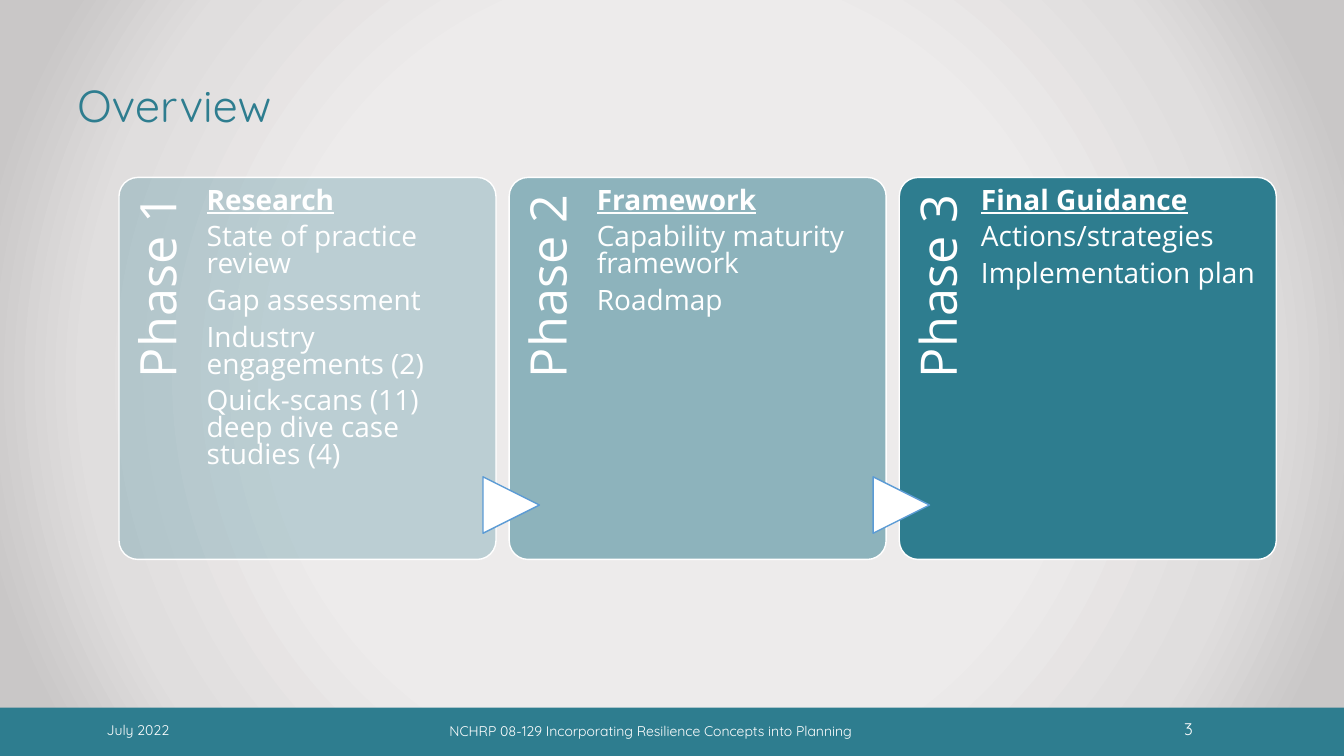
from lxml import etree
from pptx import Presentation
from pptx.dml.color import RGBColor
from pptx.enum import shapes, text
from pptx.oxml import parse_xml
from pptx.oxml.ns import nsdecls, qn
from pptx.util import Pt

TEAL, WHITE, ARROW_EDGE = "2E7D8F", "FFFFFF", "5B9BD5"
PHASES = [
    (26, 8.6, ["Research", "State of practice review", "Gap assessment",
               "Industry engagements (2)", "Quick-scans (11) deep dive case studies (4)"]),
    (50, 8.6, ["Framework", "Capability maturity framework", "Roadmap"]),
    (100, 4.3, ["Final Guidance", "Actions/strategies", "Implementation plan"]),
]
CARD_LEFT, CARD_TOP, CARD_STEP, CARD_WIDTH, CARD_HEIGHT = 85, 126.7, 278.7, 269.3, 272.9


def add_filled(kind, box, fill, line=None, opacity=100):
    """Add a flat preset shape; box is left, top, width, height in points."""
    shape = slide.shapes.add_shape(kind, *map(Pt, box))
    shape.shadow.inherit = False
    shape.fill.solid()
    shape.fill.fore_color.rgb = RGBColor.from_string(fill)
    if opacity < 100:
        color = shape.fill._xPr.find(qn("a:solidFill"))[0]
        etree.SubElement(color, qn("a:alpha")).set("val", str(opacity * 1000))
    if line:
        shape.line.color.rgb = RGBColor.from_string(line)
        shape.line.width = Pt(1)
    else:
        shape.line.fill.background()
    return shape


def style(paragraph, name, size, color):
    paragraph.font.name = name
    paragraph.font.size = Pt(size)
    paragraph.font.color.rgb = RGBColor.from_string(color)


deck = Presentation()
deck.slide_width, deck.slide_height = Pt(960), Pt(540)
comparison_layout = deck.slide_layouts[4]
slide = deck.slides.add_slide(comparison_layout)

# Radial grey background
stops = "".join(f'<a:gs pos="{position * 1000}"><a:srgbClr val="{color}"/></a:gs>'
                for position, color in ((50, "EDEBEB"), (76, "E0DEDE"), (92, "C9C7C7")))
slide._element.cSld.insert(0, parse_xml(
    f'<p:bg {nsdecls("p", "a")}><p:bgPr><a:gradFill rotWithShape="1"><a:gsLst>{stops}</a:gsLst>'
    '<a:path path="circle"><a:fillToRect l="50000" t="50000" r="50000" b="50000"/></a:path>'
    '</a:gradFill><a:effectLst/></p:bgPr></p:bg>'))

# Footer band
add_filled(shapes.MSO_SHAPE.RECTANGLE, (0, 505.5, 960, 36), TEAL)
for wording, left, top, width, height, size in (
        ("July 2022", 69.1, 512, 83, 19.4, 10),
        ("NCHRP 08-129 Incorporating Resilience Concepts into Planning", 313.9, 512.6, 334, 19.4, 10),
        ("3", 838.8, 506.2, 53.3, 28.8, 12)):
    footer = slide.shapes.add_textbox(Pt(left), Pt(top), Pt(width), Pt(height)).text_frame
    footer.word_wrap = True
    footer.vertical_anchor = text.MSO_ANCHOR.MIDDLE
    footer.text = wording
    style(footer.paragraphs[0], "Quicksand", size, WHITE)

# Title
title = slide.shapes.title
title.left, title.top, title.width, title.height = Pt(48), Pt(0), Pt(864), Pt(97.2)
title.text_frame.text = "Overview"
title.text_frame.auto_size = text.MSO_AUTO_SIZE.NONE
title.text_frame.vertical_anchor = text.MSO_ANCHOR.BOTTOM
heading = title.text_frame.paragraphs[0]
heading.alignment = text.PP_ALIGN.LEFT
heading.line_spacing = Pt(48)
style(heading, "Quicksand", 32, TEAL)

# Phase cards, each with a rotated label and a list
bodies = [holder for holder in slide.placeholders if holder != title]
unused = bodies.pop()
unused._element.getparent().remove(unused._element)
for index, (body, (opacity, inset, items)) in enumerate(zip(bodies, PHASES)):
    left = CARD_LEFT + index * CARD_STEP
    card = add_filled(shapes.MSO_SHAPE.ROUNDED_RECTANGLE,
                      (left, CARD_TOP, CARD_WIDTH, CARD_HEIGHT), TEAL, WHITE, opacity)
    card.adjustments[0] = 0.05

    label = slide.shapes.add_textbox(Pt(left - 85), Pt(211.7), Pt(223.9), Pt(54))
    label.rotation = 270
    frame = label.text_frame
    frame.word_wrap = True
    frame.margin_left = frame.margin_bottom = 0
    frame.margin_top, frame.margin_right = Pt(10), Pt(12.2)
    frame.text = f"Phase {index + 1}"
    frame.paragraphs[0].alignment = text.PP_ALIGN.RIGHT
    frame.paragraphs[0].line_spacing = 0.9
    style(frame.paragraphs[0], "Open Sans", 36, WHITE)

    if index:
        add_filled(shapes.MSO_SHAPE.FLOWCHART_EXTRACT,
                   (left - 18.7, 340.6, 40.3, 40.3), WHITE, ARROW_EDGE).rotation = 90

    body.left, body.top, body.width, body.height = map(
        Pt, (left + 54, CARD_TOP, 200.9, CARD_HEIGHT))
    slide.shapes._spTree.append(body._element)  # lists sit in front of their cards
    frame = body.text_frame
    frame.auto_size = text.MSO_AUTO_SIZE.NONE
    frame.vertical_anchor = text.MSO_ANCHOR.TOP
    frame.margin_left, frame.margin_top = Pt(inset), Pt(8)
    frame.margin_right = frame.margin_bottom = 0
    frame.text = "\n".join(items)
    for row, paragraph in enumerate(frame.paragraphs):
        paragraph.line_spacing = 0.8
        paragraph.space_before, paragraph.space_after = Pt(0), Pt(7)
        style(paragraph, "Open Sans", 20, WHITE)
        paragraph.font.bold = paragraph.font.underline = row == 0
        properties = paragraph._p.get_or_add_pPr()
        properties.set("marL", "0")
        properties.set("indent", "0")
        properties.insert_element_before(
            parse_xml(f'<a:buNone {nsdecls("a")}/>'), "a:tabLst", "a:defRPr", "a:extLst")

deck.save("out.pptx")
